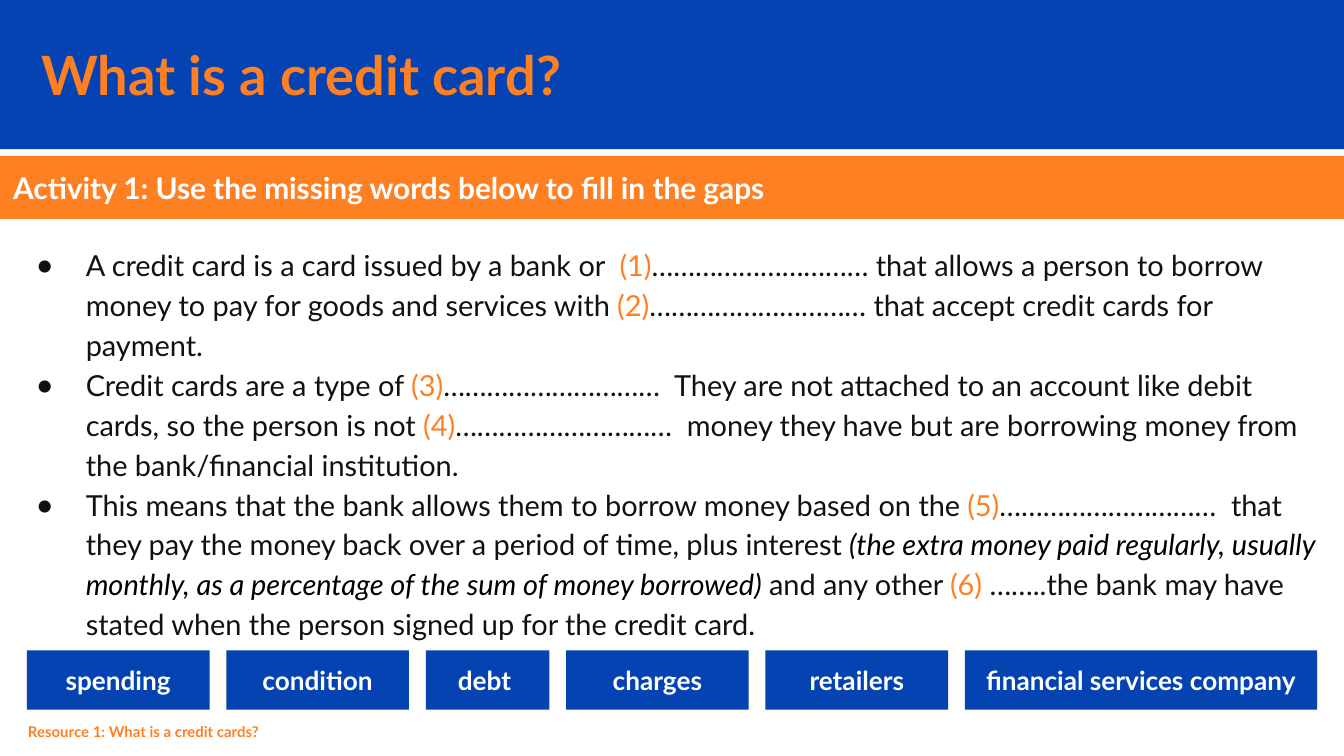
from dataclasses import dataclass
from typing import NamedTuple

from lxml.etree import SubElement
from pptx import Presentation
from pptx.dml.color import RGBColor
from pptx.enum.shapes import MSO_SHAPE as Shape
from pptx.enum.text import MSO_ANCHOR as Anchor, PP_ALIGN as Align
from pptx.oxml.ns import qn
from pptx.util import Inches, Pt

# The grid: square cells of a tenth of an inch
CELL = Inches(0.1)
COLUMNS, ROWS = 100, 56.25


@dataclass(frozen=True)
class Theme:
    font: str = "Lato"
    blue: str = "0543B3"
    orange: str = "FF8022"
    white: str = "FFFFFF"
    ink: str = "111111"
    black: str = "000000"
    title: float = 29
    activity: float = 16
    body: float = 15.5
    word: float = 14
    footer: float = 8


THEME = Theme()


class Area(NamedTuple):
    column: float
    row: float
    columns: float
    rows: float

    def lengths(self) -> list[int]:
        return [round(cells * CELL) for cells in self]


class Span(NamedTuple):
    text: str
    color: str = THEME.ink
    italic: bool = False


class Word(NamedTuple):
    text: str
    columns: float = 13.6


def number(value: int) -> Span:
    return Span(f"({value})", THEME.orange)


DOTS = "…" * 10
BULLETS = [
    [
        Span("A credit card is a card issued by a bank or  "), number(1),
        Span(f"{DOTS} that allows a person to borrow money to pay for goods and services with "),
        number(2), Span(f"{DOTS} that accept credit cards for payment."),
    ],
    [
        Span("Credit cards are a type of "), number(3),
        Span(f"{DOTS}  They are not attached to an account like debit cards, so the person is not "),
        number(4),
        Span(f"{DOTS}  money they have but are borrowing money from the bank/financial institution."),
    ],
    [
        Span("This means that the bank allows them to borrow money based on the "), number(5),
        Span(f"{DOTS}  that they pay the money back over a period of time, plus interest "),
        Span("(the extra money paid regularly, usually monthly, as a percentage of the sum of "
             "money borrowed)", THEME.black, True),
        Span(" and any other "), number(6),
        Span(" ……..the bank may have stated when the person signed up for the credit card."),
    ],
]
WORDS = [
    Word("spending"), Word("condition"), Word("debt ", 9.2), Word("charges"),
    Word("retailers"), Word("financial services company", 26.2),
]


def set_frame(shape, anchor: Anchor):
    frame = shape.text_frame
    frame.word_wrap = True
    frame.vertical_anchor = anchor
    frame.margin_left = frame.margin_right = CELL
    frame.margin_top = frame.margin_bottom = CELL
    return frame


def write_label(shape, text: str, size: float, color: str,
                align: Align = Align.LEFT, anchor: Anchor = Anchor.MIDDLE) -> None:
    para = set_frame(shape, anchor).paragraphs[0]
    para.text = text
    para.alignment = align
    para.font.name = THEME.font
    para.font.size = Pt(size)
    para.font.bold = True
    para.font.color.rgb = RGBColor.from_string(color)


def add_block(page, area: Area, color: str):
    block = page.shapes.add_shape(Shape.RECTANGLE, *area.lengths())
    block.shadow.inherit = False
    block.fill.solid()
    block.fill.fore_color.rgb = RGBColor.from_string(color)
    block.line.fill.background()
    return block


def add_bullet(para) -> None:
    properties = para._p.get_or_add_pPr()
    properties.set("marL", str(Inches(0.5)))
    properties.set("indent", str(-Inches(0.36)))
    color = SubElement(properties, qn("a:buClr"))
    SubElement(color, qn("a:srgbClr"), val=THEME.ink)
    SubElement(properties, qn("a:buSzPct"), val="86000")
    SubElement(properties, qn("a:buFont"), typeface=THEME.font)
    SubElement(properties, qn("a:buChar"), char="●")


def add_bullets(page, area: Area, bullets: list[list[Span]]) -> None:
    box = page.shapes.add_textbox(*area.lengths())
    frame = set_frame(box, Anchor.TOP)
    for index, spans in enumerate(bullets):
        para = frame.add_paragraph() if index else frame.paragraphs[0]
        add_bullet(para)
        para.line_spacing = 1.15
        para.font.name = THEME.font
        para.font.size = Pt(THEME.body)
        for span in spans:
            run = para.add_run()
            run.text = span.text
            run.font.color.rgb = RGBColor.from_string(span.color)
            if span.italic:
                run.font.italic = True


def add_word_bank(page, area: Area, words: list[Word]) -> None:
    gap = (area.columns - sum(word.columns for word in words)) / (len(words) - 1)
    column = area.column
    for word in words:
        block = add_block(page, Area(column, area.row, word.columns, area.rows), THEME.blue)
        write_label(block, word.text, THEME.word, THEME.white, Align.CENTER)
        column += word.columns + gap


def main() -> None:
    deck = Presentation()
    deck.slide_width, deck.slide_height = round(COLUMNS * CELL), round(ROWS * CELL)
    page = deck.slides.add_slide(deck.slide_layouts[6])

    # Title band
    add_block(page, Area(0, 0, COLUMNS, 11.1), THEME.blue)
    title = page.shapes.add_textbox(*Area(2.1, 2.7, 84.6, 5.6).lengths())
    write_label(title, "What is a credit card?", THEME.title, THEME.orange)

    # Activity band
    activity = add_block(page, Area(0, 11.6, COLUMNS, 4.7), THEME.orange)
    write_label(activity, "Activity 1: Use the missing words below to fill in the gaps",
                THEME.activity, THEME.white)

    # Sentences with gaps
    add_bullets(page, Area(0.4, 17.05, 99.6, 31.6), BULLETS)

    # Missing words
    add_word_bank(page, Area(2, 48.4, 96, 4.4), WORDS)

    # Footer
    footer = page.shapes.add_textbox(*Area(1.1, 53.1, 45.6, 3.1).lengths())
    write_label(footer, "Resource 1: What is a credit cards?", THEME.footer, THEME.orange,
                anchor=Anchor.TOP)

    deck.save("out.pptx")


if __name__ == "__main__":
    main()
